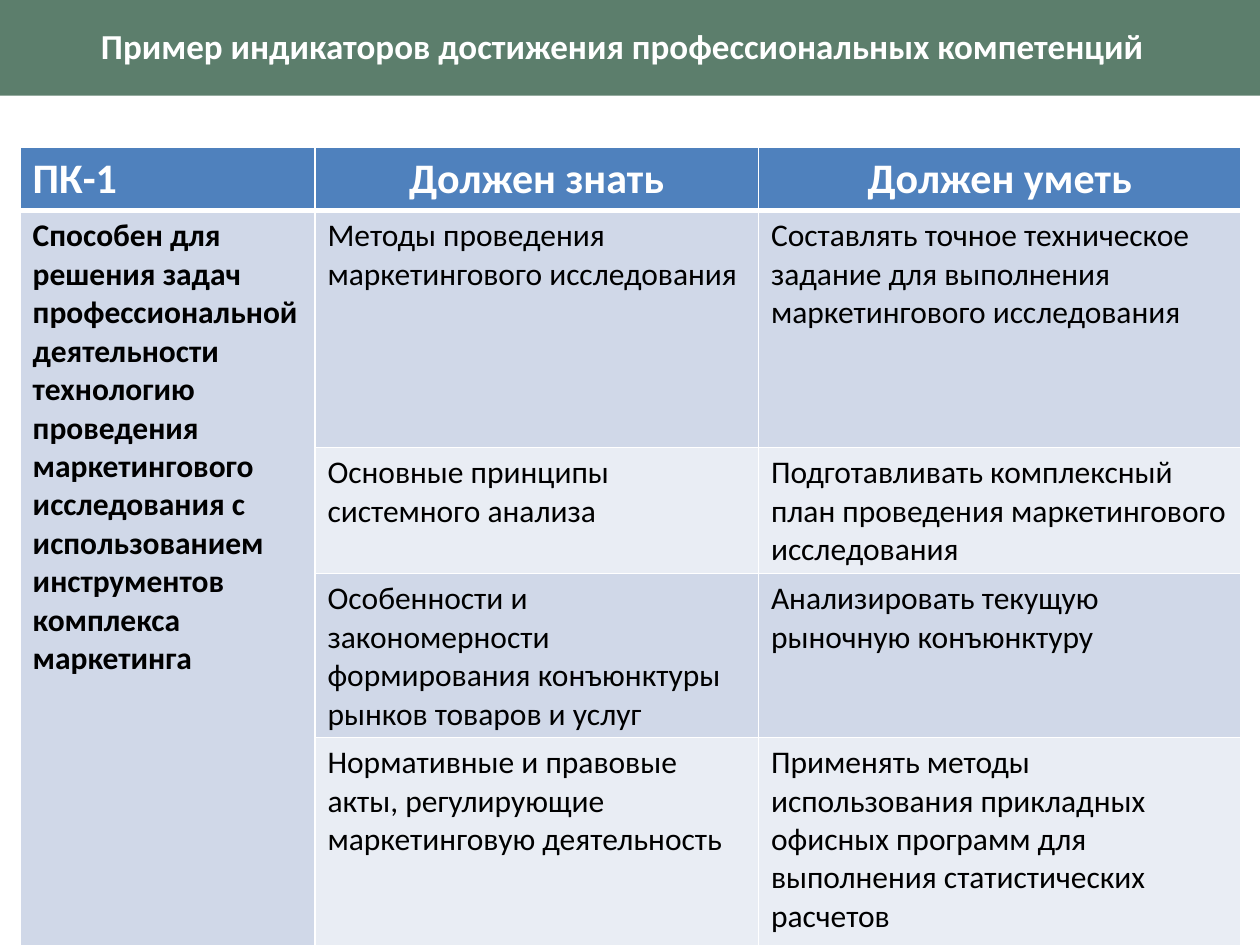
from dataclasses import dataclass

from lxml.etree import SubElement
from pptx import Presentation
from pptx.dml.color import RGBColor
from pptx.enum.shapes import MSO_SHAPE
from pptx.enum.text import MSO_ANCHOR, PP_ALIGN
from pptx.oxml.ns import qn
from pptx.util import Inches, Pt


@dataclass(frozen=True)
class Theme:
    font: str = "Calibri"
    white: str = "FFFFFF"
    black: str = "000000"
    banner: str = "345E48"
    banner_opacity: int = 80
    header: str = "4F81BD"
    bands: tuple = ("D0D8E8", "E9EDF4")
    title_size: int = 20
    header_size: int = 24
    body_size: int = 18
    thin_line: int = 1
    thick_line: int = 3


THEME = Theme()

TITLE = "Пример индикаторов достижения профессиональных компетенций"
HEADINGS = ("ПК-1", "Должен знать", "Должен уметь")
COMPETENCE = (
    "Способен для решения задач профессиональной деятельности технологию "
    "проведения маркетингового исследования с использованием инструментов "
    "комплекса маркетинга"
)
INDICATORS = (
    ("Методы проведения маркетингового исследования",
     "Составлять точное техническое задание для выполнения маркетингового исследования"),
    ("Основные принципы системного анализа",
     "Подготавливать комплексный план проведения маркетингового исследования"),
    ("Особенности и закономерности формирования конъюнктуры рынков товаров и услуг",
     "Анализировать текущую рыночную конъюнктуру"),
    ("Нормативные и правовые акты, регулирующие маркетинговую деятельность",
     "Применять методы использования прикладных офисных программ "
     "для выполнения статистических расчетов"),
)
COLUMN_WIDTHS = (2.34, 3.52, 3.83)
ROW_HEIGHTS = (0.47, 1.88, 0.97, 0.97, 1.79)


def write_text(frame, text, size, color, bold=False, align=PP_ALIGN.LEFT):
    frame.word_wrap = True
    para = frame.paragraphs[0]
    para.text = text
    para.alignment = align
    para.font.name = THEME.font
    para.font.size = Pt(size)
    para.font.bold = bold
    para.font.color.rgb = RGBColor.from_string(color)


def add_banner(page):
    banner = page.shapes.add_shape(
        MSO_SHAPE.RECTANGLE, 0, 0, Inches(10), Inches(0.76))
    banner.shadow.inherit = False
    banner.line.fill.background()
    banner.fill.solid()
    banner.fill.fore_color.rgb = RGBColor.from_string(THEME.banner)
    color = banner.fill._xPr.find(qn("a:solidFill"))[0]
    SubElement(color, qn("a:alpha"), val=str(THEME.banner_opacity * 1000))


def add_title(page):
    box = page.shapes.add_textbox(0, Inches(0.04), Inches(9.88), Inches(0.64))
    box.text_frame.vertical_anchor = MSO_ANCHOR.MIDDLE
    write_text(box.text_frame, TITLE, THEME.title_size, THEME.white,
               bold=True, align=PP_ALIGN.CENTER)


def style_cell(cell, fill, top=THEME.thin_line, bottom=THEME.thin_line):
    # Borders must precede the fill in the cell properties
    properties = cell._tc.get_or_add_tcPr()
    widths = {"L": THEME.thin_line, "R": THEME.thin_line, "T": top, "B": bottom}
    for side, width in widths.items():
        line = SubElement(properties, qn(f"a:ln{side}"), w=str(Pt(width)))
        SubElement(SubElement(line, qn("a:solidFill")),
                   qn("a:srgbClr"), val=THEME.white)
    cell.fill.solid()
    cell.fill.fore_color.rgb = RGBColor.from_string(fill)


def add_indicator_table(page):
    table = page.shapes.add_table(
        len(ROW_HEIGHTS), len(COLUMN_WIDTHS), Inches(0.16), Inches(1.17),
        Inches(sum(COLUMN_WIDTHS)), Inches(sum(ROW_HEIGHTS))).table
    for column, width in zip(table.columns, COLUMN_WIDTHS):
        column.width = Inches(width)
    for row, height in zip(table.rows, ROW_HEIGHTS):
        row.height = Inches(height)

    # Header row
    for index, heading in enumerate(HEADINGS):
        cell = table.cell(0, index)
        style_cell(cell, THEME.header, bottom=THEME.thick_line)
        write_text(cell.text_frame, heading, THEME.header_size, THEME.white,
                   bold=True, align=PP_ALIGN.CENTER if index else PP_ALIGN.LEFT)

    # Indicator rows in alternating bands
    for row, texts in enumerate(INDICATORS, start=1):
        band = THEME.bands[(row - 1) % 2]
        top = THEME.thick_line if row == 1 else THEME.thin_line
        style_cell(table.cell(row, 0), THEME.bands[0], top=top)
        for column, text in enumerate(texts, start=1):
            cell = table.cell(row, column)
            style_cell(cell, band, top=top)
            write_text(cell.text_frame, text, THEME.body_size, THEME.black)

    # Competence spanning all indicator rows
    competence = table.cell(1, 0)
    competence.merge(table.cell(len(INDICATORS), 0))
    write_text(competence.text_frame, COMPETENCE, THEME.body_size, THEME.black,
               bold=True)


def main():
    deck = Presentation()
    deck.slide_width, deck.slide_height = Inches(10), Inches(7.5)
    page = deck.slides.add_slide(deck.slide_layouts[6])
    add_banner(page)
    add_title(page)
    add_indicator_table(page)
    deck.save("out.pptx")


if __name__ == "__main__":
    main()
